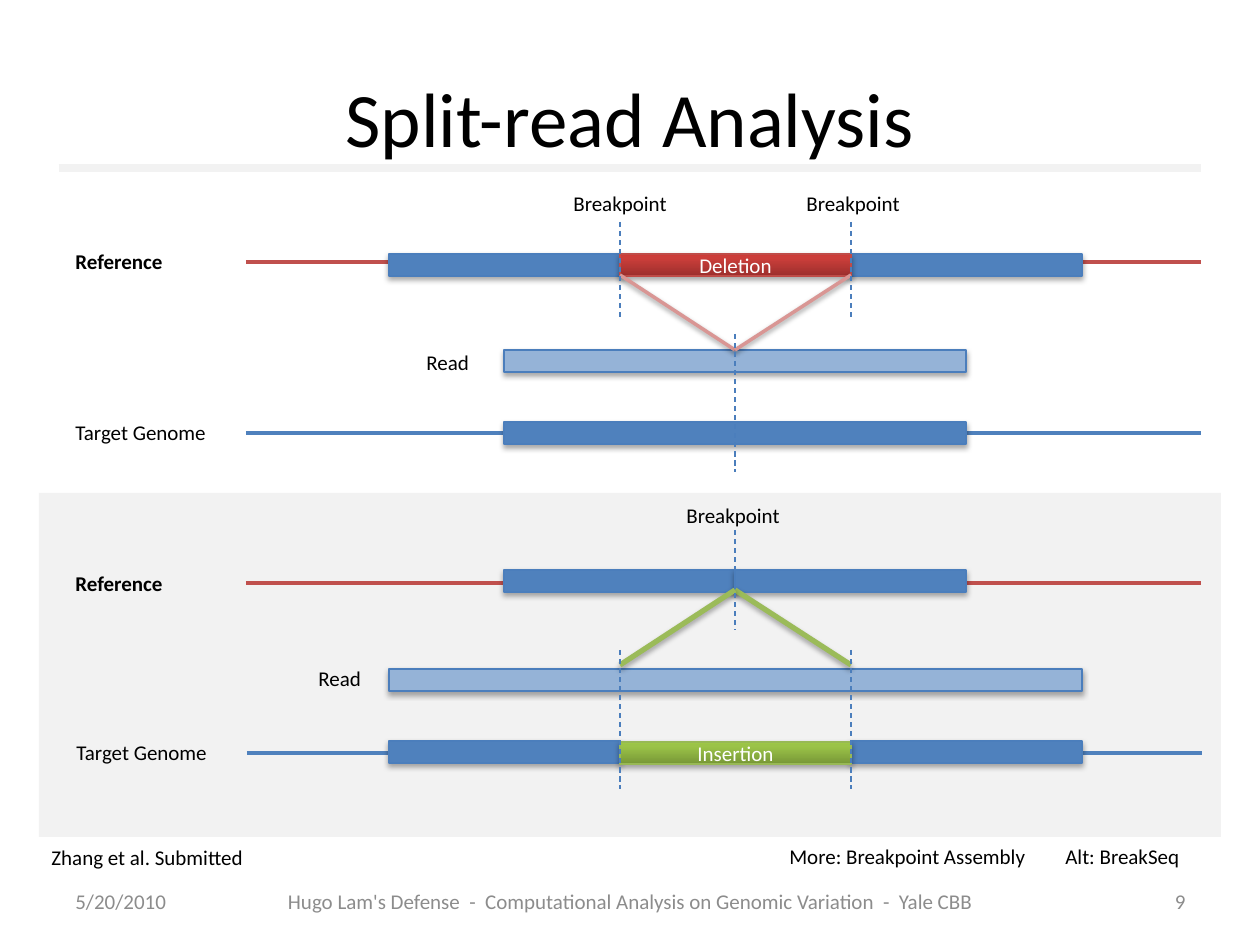
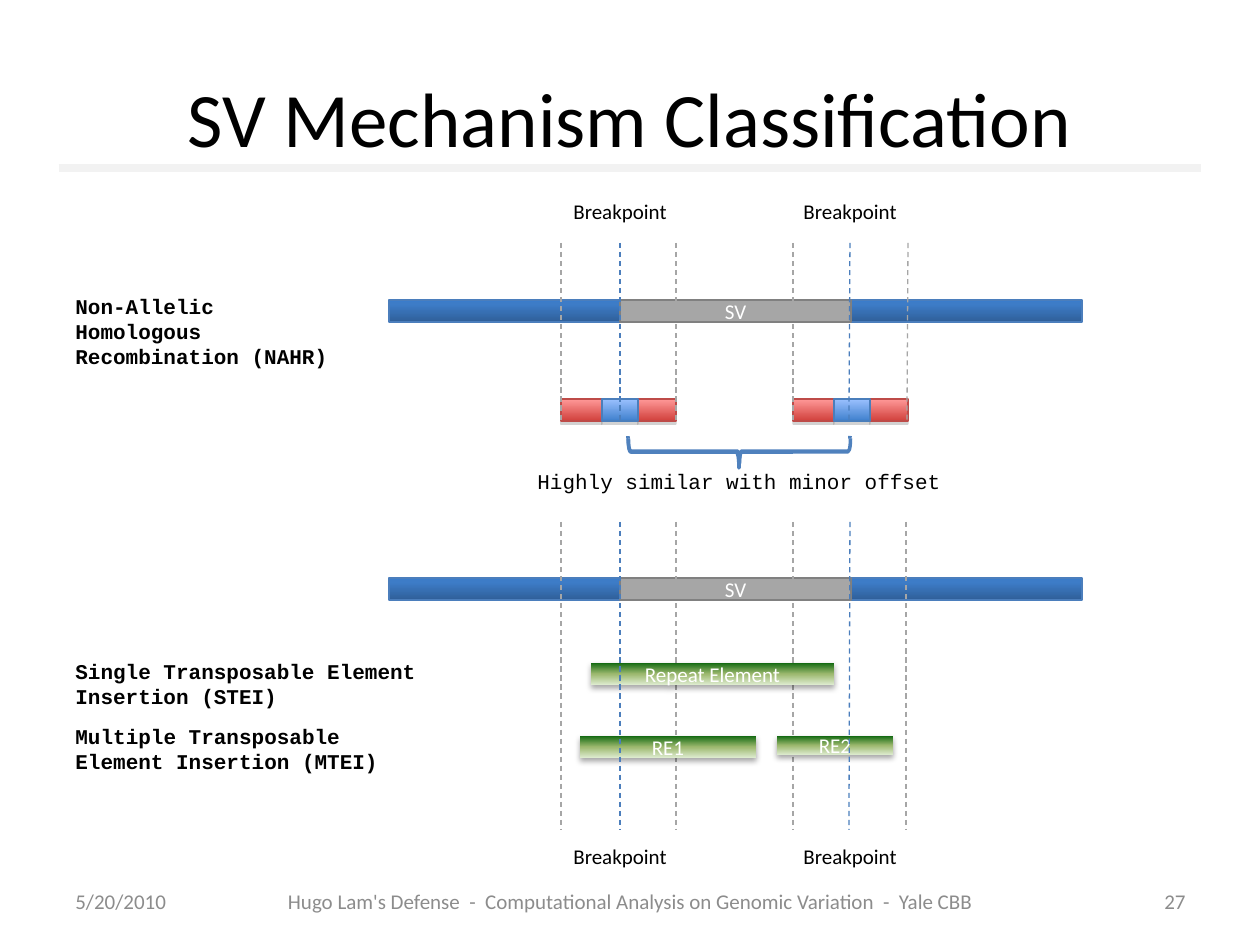
from lxml.etree import SubElement
from pptx import Presentation
from pptx.dml.color import RGBColor
from pptx.enum.dml import MSO_LINE
from pptx.enum.shapes import MSO_CONNECTOR, MSO_SHAPE
from pptx.enum.text import MSO_ANCHOR, MSO_AUTO_SIZE, PP_ALIGN
from pptx.oxml.ns import qn
from pptx.util import Pt

PX = 914400 / 126
BAR_H = 22
LABEL_H = 38
GRID = [389 + 231 * i // 2 for i in range(7)]

COLORS = dict(
    black="000000", white="FFFFFF", footer="8C8C8C", band="F2F2F2",
    blue="4F81BD", blue_edge="4B7EBC", pale="95B3D7", red="C0504D",
    pink="D99694", green="9BBB59", gray="A6A6A6", gray_edge="808080",
    red_edge="BF4C48", green_edge="98B955", rose_edge="BE4B48", sky_edge="4A7EBB",
)
GRADIENTS = dict(
    deletion=(270, [(0, "9C2F2D"), (80, "CB3E3A"), (100, "CE3B37")]),
    insertion=(270, [(0, "779737"), (80, "9BC348"), (100, "9DC746")]),
    flank=(270, [(0, "2F5F99"), (80, "3D7CC7"), (100, "3A7CCB")]),
    repeat=(270, [(0, "DDEBCF"), (50, "9CB86E"), (100, "156B13")]),
    rose=(90, [(0, "FF9A99"), (100, "D1403C")]),
    sky=(90, [(0, "9BC1FF"), (100, "3F80CD")]),
)
SHADOWS = dict(
    bar=("000000", 35, 40000, 23000),
    link=("000000", 38, 40000, 20000),
    flat=("808080", 35, 0, 23000),
)
STYLES = dict(
    genome=("blue", "blue_edge", "bar"),
    read=("pale", "blue_edge", "bar"),
    deletion=("deletion", "red_edge", "bar"),
    insertion=("insertion", "green_edge", "bar"),
    flank=("flank", "blue_edge", None),
    sv=("gray", "gray_edge", None),
    repeat=("repeat", None, "bar"),
    rose=("rose", "rose_edge", "flat"),
    sky=("sky", "sky_edge", "flat"),
)

DATE = "5/20/2010"
FOOTER = "Hugo Lam's Defense  -  Computational Analysis on Genomic Variation  -  Yale CBB"

SPLIT_READ = dict(
    title="Split-read Analysis",
    number="9",
    panel=(39, 493, 1182, 344),
    tracks=[(246, 262, "red"), (246, 433, "blue"), (246, 583, "red"), (247, 753, "blue")],
    bars=[
        (0, 2, 254, "genome", ""), (4, 6, 254, "genome", ""),
        (2, 4, 254, "deletion", "Deletion"),
        (1, 5, 422, "genome", ""),
        (1, 3, 570, "genome", ""), (3, 5, 570, "genome", ""),
        (0, 6, 669, "read", ""),
        (0, 2, 741, "genome", ""), (4, 6, 741, "genome", ""),
        (2, 4, 742, "insertion", "Insertion"),
    ],
    deletion_read=(1, 5, 350, "read", ""),
    deletion_ends=[(2, 275), (4, 275)],
    insertion_tip=(3, 590),
    insertion_ends=[(4, 665), (2, 665)],
    breakpoints=[(2, 222, 321), (4, 222, 321), (3, 334, 472),
                 (3, 530, 630), (2, 650, 789), (4, 650, 789)],
    labels=[
        ("Reference", 63, 242, 113, True), ("Reference", 63, 564, 113, True),
        ("Read", 414, 343, 68, False), ("Read", 306, 659, 68, False),
        ("Target Genome", 63, 413, 158, False), ("Target Genome", 64, 733, 158, False),
        ("Breakpoint", 561, 184, 120, False), ("Breakpoint", 794, 184, 120, False),
        ("Breakpoint", 674, 496, 120, False),
        ("Zhang et al. Submitted", 39, 838, 219, False),
        ("More: Breakpoint Assembly", 777, 837, 265, False),
        ("Alt: BreakSeq", 1053, 837, 141, False),
    ],
)

MECHANISMS = dict(
    title="SV Mechanism Classification",
    number="27",
    sv_rows=[300, 578],
    sv_bars=[(0, 2, "flank", ""), (4, 6, "flank", ""), (2, 4, "sv", "SV")],
    homology_y=399,
    homology_left=[561, 793],
    homology_parts=[(0, 41, "rose"), (77, 38, "rose"), (41, 36, "sky")],
    braces=[(723, 341, 32, 222), (727, 340, 25, 222)],
    repeats=[("Repeat Element", 591, 663, 243, 22),
             ("RE1", 580, 736, 176, 22), ("RE2", 777, 736, 116, 19)],
    homology_edges=[(561, 561), (676, 676), (793, 793), (908, 907)],
    repeat_edges=[(561, 561), (676, 676), (793, 793)],
    last_edge=(906, 906),
    breakpoints=[(620, 620), (850, 849)],
    spans=[(243, 421), (522, 830)],
    labels=[("Breakpoint", x, y, 120, False) for y in (192, 837) for x in (561, 791)],
    note=("Highly similar with minor offset", 525, 462, 431, 38),
    mechanisms=[
        ("Non-Allelic Homologous Recombination (NAHR)", 63, 287, 301, 90),
        ("Single Transposable Element Insertion (STEI)", 63, 652, 381, 63),
        ("Multiple Transposable Element Insertion (MTEI)", 63, 717, 360, 63),
    ],
)


def px(*values):
    return [round(v * PX) for v in values]


def rgb(name):
    return RGBColor.from_string(COLORS[name])


def write(tf, text, size=12, font="Calibri", color="black", bold=False,
          align=PP_ALIGN.LEFT, anchor=MSO_ANCHOR.TOP, wrap=True):
    tf.word_wrap = wrap
    tf.vertical_anchor = anchor
    p = tf.paragraphs[0]
    p.alignment = align
    r = p.add_run()
    r.text = text
    r.font.size = Pt(size)
    r.font.name = font
    r.font.bold = bold
    r.font.color.rgb = rgb(color)


def add_text(slide, text, box, grow=False, **fmt):
    tf = slide.shapes.add_textbox(*px(*box)).text_frame
    write(tf, text, **fmt)
    if grow:
        tf.auto_size = MSO_AUTO_SIZE.SHAPE_TO_FIT_TEXT


def add_shadow(effects, name):
    color, alpha, blur, dist = SHADOWS[name]
    outer = SubElement(effects, qn("a:outerShdw"), blurRad=str(blur), dist=str(dist),
                       dir="5400000", rotWithShape="0")
    clr = SubElement(outer, qn("a:srgbClr"), val=color)
    SubElement(clr, qn("a:alpha"), val=str(alpha * 1000))


def set_gradient(sp, name):
    angle, stops = GRADIENTS[name]
    sp.fill.gradient()
    grad = sp._element.spPr.find(qn("a:gradFill"))
    grad.clear()
    gs_list = SubElement(grad, qn("a:gsLst"))
    for pos, color in stops:
        gs = SubElement(gs_list, qn("a:gs"), pos=str(pos * 1000))
        SubElement(gs, qn("a:srgbClr"), val=color)
    SubElement(grad, qn("a:lin"), ang=str(angle * 60000), scaled="0")


def add_box(slide, box, fill, line=None, width=0.75, shadow=None, kind=MSO_SHAPE.RECTANGLE):
    sp = slide.shapes.add_shape(kind, *px(*box))
    sp.shadow.inherit = False
    if fill in GRADIENTS:
        set_gradient(sp, fill)
    else:
        sp.fill.solid()
        sp.fill.fore_color.rgb = rgb(fill)
    if line:
        sp.line.color.rgb = rgb(line)
        sp.line.width = Pt(width)
    else:
        sp.line.fill.background()
    if shadow:
        add_shadow(sp._element.spPr.find(qn("a:effectLst")), shadow)
    return sp


def add_bar(slide, box, style, text=""):
    fill, line, shadow = STYLES[style]
    sp = add_box(slide, box, fill, line, shadow=shadow)
    if text:
        tf = sp.text_frame
        tf.margin_top = tf.margin_bottom = 0
        write(tf, text, color="white", align=PP_ALIGN.CENTER, anchor=MSO_ANCHOR.MIDDLE)
    return sp


def add_grid_bar(slide, start, end, y, style, text):
    return add_bar(slide, (GRID[start], y, GRID[end] - GRID[start], BAR_H), style, text)


def add_line(slide, x1, y1, x2, y2, color, width=0.75, dash=False, shadow=None):
    cn = slide.shapes.add_connector(MSO_CONNECTOR.STRAIGHT, *px(x1, y1, x2, y2))
    cn.line.color.rgb = rgb(color)
    cn.line.width = Pt(width)
    if dash:
        cn.line.dash_style = MSO_LINE.DASH
    effects = SubElement(cn._element.spPr, qn("a:effectLst"))
    if shadow:
        add_shadow(effects, shadow)
    return cn


def add_labels(slide, labels):
    for text, x, y, w, bold in labels:
        add_text(slide, text, (x, y, w, LABEL_H), grow=True, bold=bold, wrap=False)


def start_slide(prs, title):
    slide = prs.slides.add_slide(prs.slide_layouts[6])
    add_line(slide, 59, 168, 1201, 168, "band", 5)
    return slide


def add_frame(slide, content):
    add_text(slide, content["title"], (63, 38, 1134, 158), size=44,
             align=PP_ALIGN.CENTER, anchor=MSO_ANCHOR.MIDDLE)
    for text, x, w, align in [(DATE, 63, 128, PP_ALIGN.LEFT),
                              (FOOTER, 207, 847, PP_ALIGN.CENTER),
                              (content["number"], 1070, 128, PP_ALIGN.RIGHT)]:
        add_text(slide, text, (x, 876, w, 50), color="footer", align=align,
                 anchor=MSO_ANCHOR.MIDDLE)


def new_slide(prs, content):
    slide = prs.slides.add_slide(prs.slide_layouts[6])
    add_line(slide, 59, 168, 1201, 168, "band", 5)
    if "panel" in content:
        add_box(slide, content["panel"], "band")
    add_frame(slide, content)
    return slide


def build_split_read(prs):
    c = SPLIT_READ
    slide = new_slide(prs, c)
    for x, y, color in c["tracks"]:
        add_line(slide, x, y, x + 955, y, color, 2.25)
    for bar in c["bars"]:
        add_grid_bar(slide, *bar)
    read = add_grid_bar(slide, *c["deletion_read"])
    for col, y in c["deletion_ends"]:
        link = add_line(slide, GRID[col], y, GRID[3], 350, "pink", 2, shadow="link")
        link.end_connect(read, 0)
    tip_col, tip_y = c["insertion_tip"]
    for col, y in c["insertion_ends"]:
        add_line(slide, GRID[tip_col], tip_y, GRID[col], y, "green", 3, shadow="bar")
    for col, top, bottom in c["breakpoints"]:
        add_line(slide, GRID[col], top, GRID[col], bottom, "blue_edge", dash=True)
    add_labels(slide, c["labels"])


def build_mechanisms(prs):
    c = MECHANISMS
    slide = new_slide(prs, c)
    upper, lower = c["spans"]

    def add_edges(edges, span, color):
        return [add_line(slide, x1, span[0], x2, span[1], color, dash=True)
                for x1, x2 in edges]

    text, *box = c["note"]
    add_text(slide, text, box, grow=True, font="Courier New", wrap=False)
    centers = []
    for left in c["homology_left"]:
        for dx, w, style in c["homology_parts"]:
            part = add_bar(slide, (left + dx, c["homology_y"], w, BAR_H), style)
        centers.append(part)
    for y in c["sv_rows"]:
        for start, end, style, text in c["sv_bars"]:
            add_grid_bar(slide, start, end, y, style, text)
    for box in c["braces"]:
        brace = add_box(slide, box, "white", "blue", 2, kind=MSO_SHAPE.LEFT_BRACE)
        brace.rotation = 270
    add_edges(c["homology_edges"], upper, "gray")
    add_edges(c["repeat_edges"], lower, "gray")
    for text, *box in c["repeats"]:
        add_bar(slide, box, "repeat", text)
    first, second = add_edges(c["breakpoints"], upper, "blue_edge")
    first.end_connect(centers[0], 2)
    add_edges(c["breakpoints"], lower, "blue_edge")
    add_edges([c["last_edge"]], lower, "gray")
    for text, *box in c["mechanisms"]:
        add_text(slide, text, box, grow=True, font="Courier New", bold=True)
    add_labels(slide, c["labels"])


def main():
    prs = Presentation()
    prs.slide_width, prs.slide_height = px(1260, 945)
    build_split_read(prs)
    build_mechanisms(prs)
    prs.save("out.pptx")


if __name__ == "__main__":
    main()
